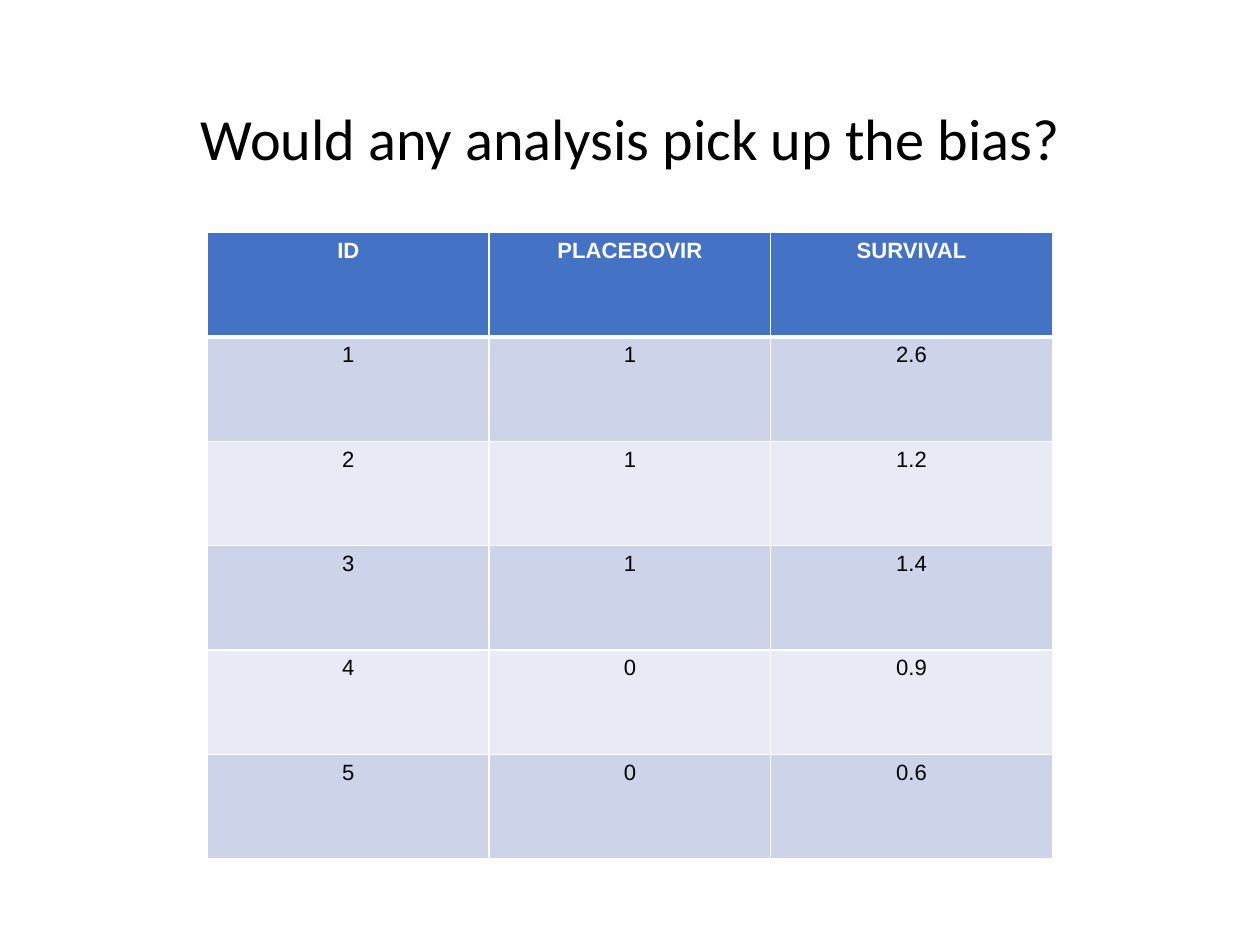
from pptx import Presentation
from pptx.dml.color import RGBColor
from pptx.enum.text import MSO_ANCHOR as Anchor, PP_ALIGN as Align
from pptx.oxml import parse_xml
from pptx.oxml.ns import nsdecls
from pptx.util import Inches, Pt

COLORS = {
    "header": "4472C4",
    "odd": "CDD4EA",
    "even": "E8EBF5",
    "white": "FFFFFF",
    "black": "000000",
}
TRIAL = [
    ("ID", "PLACEBOVIR", "SURVIVAL"),
    ("1", "1", "2.6"),
    ("2", "1", "1.2"),
    ("3", "1", "1.4"),
    ("4", "0", "0.9"),
    ("5", "0", "0.6"),
]


def rgb(name):
    return RGBColor.from_string(COLORS[name])


class Sheet:
    WIDTH, HEIGHT = 11.11, 8.33
    COLUMN, ROW = 2.483, 0.92

    def __init__(self):
        self.deck = Presentation()
        self.deck.slide_width = Inches(self.WIDTH)
        self.deck.slide_height = Inches(self.HEIGHT)
        self.slide = self.deck.slides.add_slide(self.deck.slide_layouts[6])

    def centred(self, top, columns, rows):
        width = columns * self.COLUMN
        left = (self.WIDTH - width) / 2
        return [Inches(n) for n in (left, top * self.ROW, width, rows * self.ROW)]

    def style(self, paragraph, font, size, color, bold=False):
        paragraph.alignment = Align.CENTER
        paragraph.font.name = font
        paragraph.font.size = Pt(size)
        paragraph.font.bold = bold
        paragraph.font.color.rgb = rgb(color)

    def title(self, text, top, columns, rows):
        frame = self.slide.shapes.add_textbox(*self.centred(top, columns, rows)).text_frame
        frame.word_wrap = True
        frame.vertical_anchor = Anchor.MIDDLE
        frame.margin_left = frame.margin_right = Inches(0.11)
        frame.margin_top = frame.margin_bottom = Inches(0.11)
        heading = frame.paragraphs[0]
        heading.text = text
        heading.line_spacing = 0.9
        self.style(heading, "Calibri", 37, "black")

    def borders(self, cell, top, bottom):
        properties = cell._tc.get_or_add_tcPr()
        for place, (side, points) in enumerate(
            [("L", 1), ("R", 1), ("T", top), ("B", bottom)]
        ):
            properties.insert(place, parse_xml(
                f'<a:ln{side} {nsdecls("a")} w="{Pt(points)}"><a:solidFill>'
                f'<a:srgbClr val="{COLORS["white"]}"/></a:solidFill></a:ln{side}>'
            ))

    def table(self, records, top):
        rows, columns = len(records), len(records[0])
        grid = self.slide.shapes.add_table(
            rows, columns, *self.centred(top, columns, rows)
        ).table
        for r, record in enumerate(records):
            header = r == 0
            fill = "header" if header else "odd" if r % 2 else "even"
            for c, value in enumerate(record):
                cell = grid.cell(r, c)
                cell.text = value
                cell.fill.solid()
                cell.fill.fore_color.rgb = rgb(fill)
                self.style(cell.text_frame.paragraphs[0], "Arial", 14,
                           "white" if header else "black", header)
                self.borders(cell, 3 if r == 1 else 1, 3 if header else 1)


def main():
    sheet = Sheet()
    sheet.title("Would any analysis pick up the bias?", 0.48, 3.86, 1.75)
    sheet.table(TRIAL, 2.23)
    sheet.deck.save("out.pptx")


if __name__ == "__main__":
    main()
